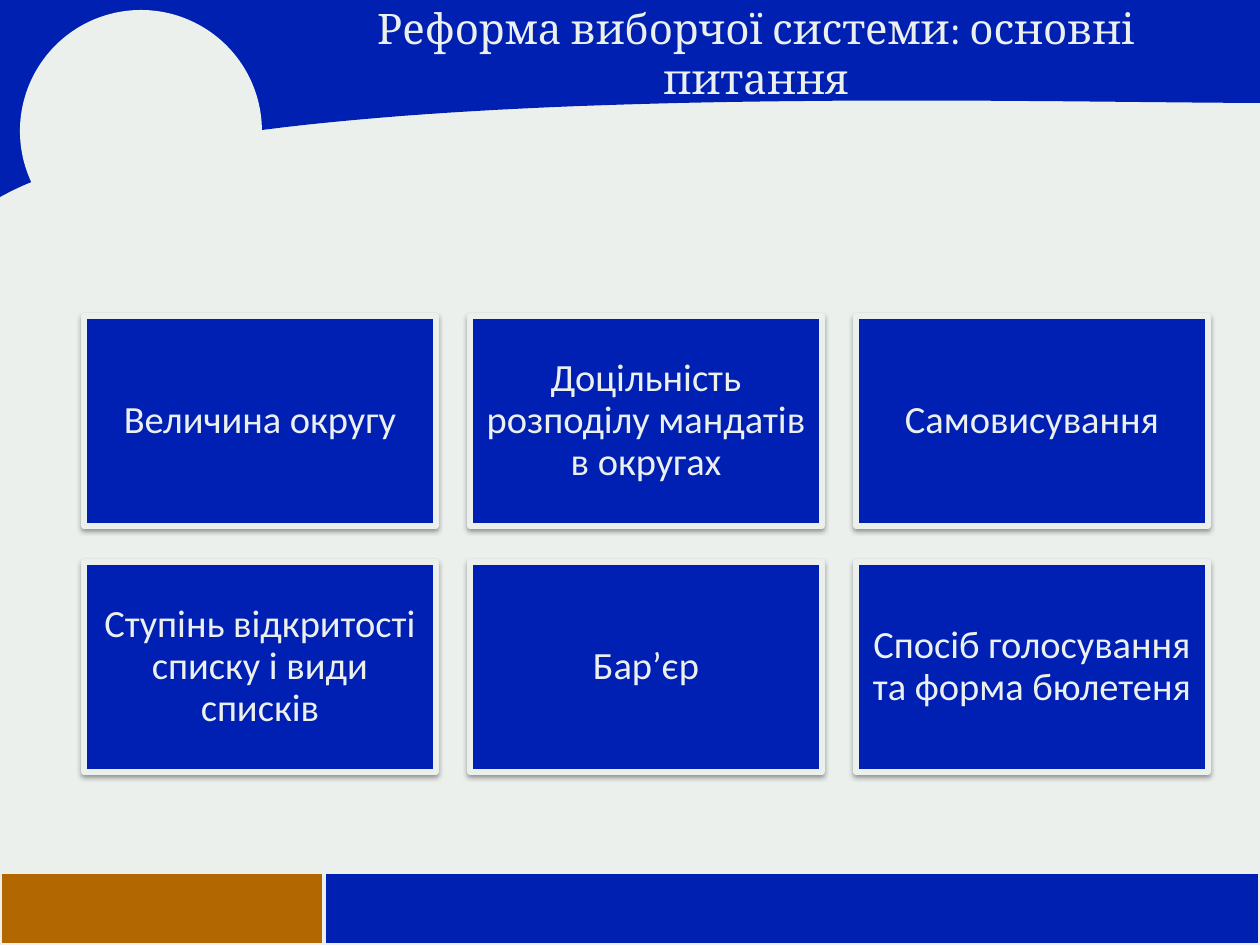
from dataclasses import dataclass

from lxml import etree
from pptx import Presentation
from pptx.dml.color import RGBColor
from pptx.enum.shapes import MSO_SHAPE
from pptx.enum.text import MSO_ANCHOR, MSO_AUTO_SIZE, PP_ALIGN
from pptx.oxml.ns import qn
from pptx.util import Pt

RECT, OVAL = MSO_SHAPE.RECTANGLE, MSO_SHAPE.OVAL
MIDDLE, CENTER, NO_FIT = MSO_ANCHOR.MIDDLE, PP_ALIGN.CENTER, MSO_AUTO_SIZE.NONE
EMU_PER_PX = 914400 / 126
WIDTH, HEIGHT = 1260, 945


@dataclass(frozen=True)
class Theme:
    paper: RGBColor = RGBColor(0xEB, 0xF0, 0xED)
    navy: RGBColor = RGBColor(0x00, 0x20, 0xB2)
    card: RGBColor = RGBColor(0x00, 0x20, 0xB3)
    ochre: RGBColor = RGBColor(0xB2, 0x67, 0x00)
    title_font: str = "Cambria"
    body_font: str = "Calibri"
    title_size: int = 24
    body_size: int = 22


THEME = Theme()
TITLE = "Реформа виборчої системи: основні питання"
ISSUES = [
    ["Величина округу", "Доцільність розподілу мандатів в округах", "Самовисування"],
    ["Ступінь відкритості списку і види списків", "Бар’єр",
     "Спосіб голосування та форма бюлетеня"],
]


def px(n):
    return round(n * EMU_PER_PX)


def set_all(target, values):
    for name, value in values.items():
        setattr(target, name, value)


def paint(sp, fill, line_width=0):
    sp.shadow.inherit = False
    sp.fill.solid()
    sp.fill.fore_color.rgb = fill
    if line_width:
        sp.line.color.rgb = THEME.paper
        sp.line.width = Pt(line_width)
    else:
        sp.line.fill.background()


def add_block(s, kind, box, fill, line_width=0):
    sp = s.shapes.add_shape(kind, *map(px, box))
    paint(sp, fill, line_width)
    return sp


def write(sp, text, font, size, inset, spacing):
    tf = sp.text_frame
    set_all(tf, {"word_wrap": True, "auto_size": NO_FIT, "vertical_anchor": MIDDLE})
    set_all(tf, {"margin_" + side: px(inset[i % 2])
                 for i, side in enumerate(("left", "top", "right", "bottom"))})
    p = tf.paragraphs[0]
    p.text = text
    set_all(p, {"alignment": CENTER, "line_spacing": spacing})
    set_all(p.font, {"name": font, "size": Pt(size), "bold": False})
    p.font.color.rgb = THEME.paper


def add_shadow(sp):
    effects = sp._element.spPr.find(qn("a:effectLst"))
    shadow = etree.SubElement(effects, qn("a:outerShdw"), blurRad="39370",
                              dist="20320", dir="5400000", rotWithShape="0")
    color = etree.SubElement(shadow, qn("a:srgbClr"), val="000000")
    etree.SubElement(color, qn("a:alpha"), val="38000")


def bezier(points, steps=60):
    for i in range(1, steps + 1):
        t = i / steps
        weights = ((1 - t) ** 3, 3 * t * (1 - t) ** 2, 3 * t * t * (1 - t), t ** 3)
        yield tuple(px(sum(w * pt[axis] for w, pt in zip(weights, points)))
                    for axis in (0, 1))


def add_header(s, box):
    x, y, w, h = box
    curve = [(x + w, y + 103), (x + 965, y + 102), (x + 210, y + 79), (x, y + h)]
    wave = s.shapes.build_freeform(px(x), px(y))
    corners = [(px(x + w), px(y)), tuple(map(px, curve[0]))]
    wave.add_line_segments(corners + list(bezier(curve)), close=True)
    paint(wave.convert_to_shape(), THEME.navy)
    add_block(s, OVAL, (x + 20, y + 10, 242, 242), THEME.paper)

    title = s.shapes.title
    set_all(title, {"left": px(x + 273), "top": px(y - 21),
                    "width": px(966), "height": px(147)})
    write(title, TITLE, THEME.title_font, THEME.title_size, (13, 6), 1.0)
    s.shapes._spTree.append(title._element)


def add_footer(s, box):
    x, y, w, h = box
    split = 324
    add_block(s, RECT, (x, y, split, h), THEME.ochre, 2)
    add_block(s, RECT, (x + split, y, w - split, h), THEME.navy, 2)


def add_cards(s, box, rows, gap_x=34, gap_y=36):
    x, y, w, h = box
    cols = len(rows[0])
    card_w = (w - gap_x * (cols - 1)) / cols
    card_h = (h - gap_y * (len(rows) - 1)) / len(rows)
    for i, row in enumerate(rows):
        for j, text in enumerate(row):
            place = (x + j * (card_w + gap_x), y + i * (card_h + gap_y), card_w, card_h)
            card = add_block(s, RECT, place, THEME.card, 3)
            add_shadow(card)
            write(card, text, THEME.body_font, THEME.body_size, (11, 11), 0.9)


def main():
    prs = Presentation()
    set_all(prs, {"slide_width": px(WIDTH), "slide_height": px(HEIGHT)})
    s = prs.slides.add_slide(prs.slide_layouts[5])
    s.background.fill.solid()
    s.background.fill.fore_color.rgb = THEME.paper
    add_footer(s, (0, 872, WIDTH, 73))
    add_header(s, (0, 0, WIDTH, 197))
    add_cards(s, (84, 316, 1124, 456), ISSUES)
    prs.save("out.pptx")


if __name__ == "__main__":
    main()
